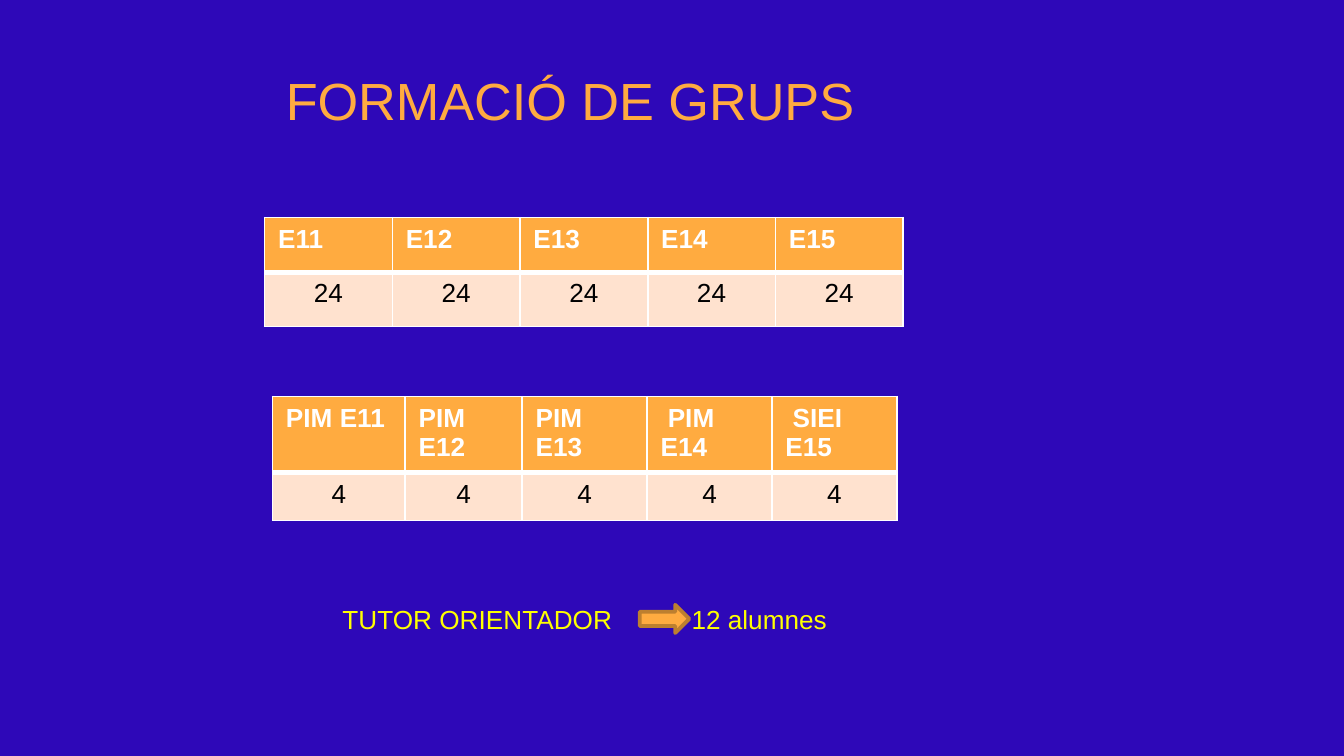
import lxml.etree
import pptx
import pptx.dml.color
import pptx.enum.shapes
import pptx.enum.text
import pptx.oxml.ns
import pptx.util

Pt = pptx.util.Pt
qn = pptx.oxml.ns.qn

COLORS = {
    "background": "2E08B8",
    "orange": "FFAB40",
    "orange_dark": "BD7F2F",
    "peach": "FFE2CF",
    "yellow": "FFFF00",
    "white": "FFFFFF",
    "black": "000000",
}


def rgb(name):
    return pptx.dml.color.RGBColor.from_string(COLORS[name])


class SlideBuilder:
    font = "Arial"
    body_size = 14
    thin, thick = 1, 3

    def __init__(self, presentation):
        self.slide = presentation.slides.add_slide(presentation.slide_layouts[6])
        fill = self.slide.background.fill
        fill.solid()
        fill.fore_color.rgb = rgb("background")

    def format_runs(self, paragraph, size, color, bold=False):
        for run in paragraph.runs:
            run.font.name = self.font
            run.font.size = Pt(size)
            run.font.bold = bold
            run.font.color.rgb = rgb(color)

    def text(self, content, left, top, width, height, size, color, tab=None):
        shape = self.slide.shapes.add_textbox(Pt(left), Pt(top), Pt(width), Pt(height))
        text_frame = shape.text_frame
        text_frame.word_wrap = True
        text_frame.text = content
        paragraph = text_frame.paragraphs[0]
        self.format_runs(paragraph, size, color)
        if tab:
            properties = paragraph._p.get_or_add_pPr()
            tab_list = lxml.etree.SubElement(properties, qn("a:tabLst"))
            lxml.etree.SubElement(tab_list, qn("a:tab"), pos=str(Pt(tab)), algn="l")

    def borders(self, cell, top, bottom):
        properties = cell._tc.get_or_add_tcPr()
        widths = {"L": self.thin, "R": self.thin, "T": top, "B": bottom}
        for side, width in widths.items():
            line = lxml.etree.SubElement(properties, qn("a:ln" + side), w=str(Pt(width)))
            fill = lxml.etree.SubElement(line, qn("a:solidFill"))
            lxml.etree.SubElement(fill, qn("a:srgbClr"), val=COLORS["white"])

    def table(self, headers, values, left, top, widths, heights):
        frame = self.slide.shapes.add_table(
            2, len(headers), Pt(left), Pt(top), Pt(sum(widths)), Pt(sum(heights)))
        table = frame.table
        table.first_row = table.horz_banding = False
        for column, width in zip(table.columns, widths):
            column.width = Pt(width)
        for row, height in zip(table.rows, heights):
            row.height = Pt(height)
        for row_index, texts in enumerate((headers, values)):
            is_header = row_index == 0
            for column_index, content in enumerate(texts):
                cell = table.cell(row_index, column_index)
                # Borders come before the fill in the cell properties
                if is_header:
                    self.borders(cell, self.thin, self.thick)
                else:
                    self.borders(cell, self.thick, self.thin)
                cell.fill.solid()
                cell.fill.fore_color.rgb = rgb("orange" if is_header else "peach")
                cell.text_frame.text = content
                paragraph = cell.text_frame.paragraphs[0]
                if not is_header:
                    paragraph.alignment = pptx.enum.text.PP_ALIGN.CENTER
                self.format_runs(paragraph, self.body_size,
                                 "white" if is_header else "black", is_header)

    def arrow(self, left, top, width, height):
        shape = self.slide.shapes.add_shape(
            pptx.enum.shapes.MSO_SHAPE.RIGHT_ARROW,
            Pt(left), Pt(top), Pt(width), Pt(height))
        shape.shadow.inherit = False
        shape.fill.solid()
        shape.fill.fore_color.rgb = rgb("orange")
        shape.line.color.rgb = rgb("orange_dark")
        shape.line.width = Pt(2)


def main():
    presentation = pptx.Presentation()
    presentation.slide_width = Pt(720)
    presentation.slide_height = Pt(405)
    builder = SlideBuilder(presentation)

    # Title
    builder.text("FORMACIÓ DE GRUPS", 146, 33, 459, 41, 28, "orange")

    # Class groups
    builder.table(["E11", "E12", "E13", "E14", "E15"], ["24"] * 5,
                  141.8, 116.6, [68.4] * 5, [29.2] * 2)

    # Support groups
    builder.table(["PIM E11", "PIM E12", "PIM E13", " PIM E14", " SIEI E15"], ["4"] * 5,
                  146, 212.5, [71.1, 62.7] + [66.9] * 3, [40.5, 25.5])

    # Pupils per tutor
    builder.text("TUTOR ORIENTADOR\t12 alumnes", 176.4, 319.7, 333, 24.5,
                 builder.body_size, "yellow", tab=187)
    builder.arrow(342.7, 324, 26.6, 15.1)

    presentation.save("out.pptx")


if __name__ == "__main__":
    main()
